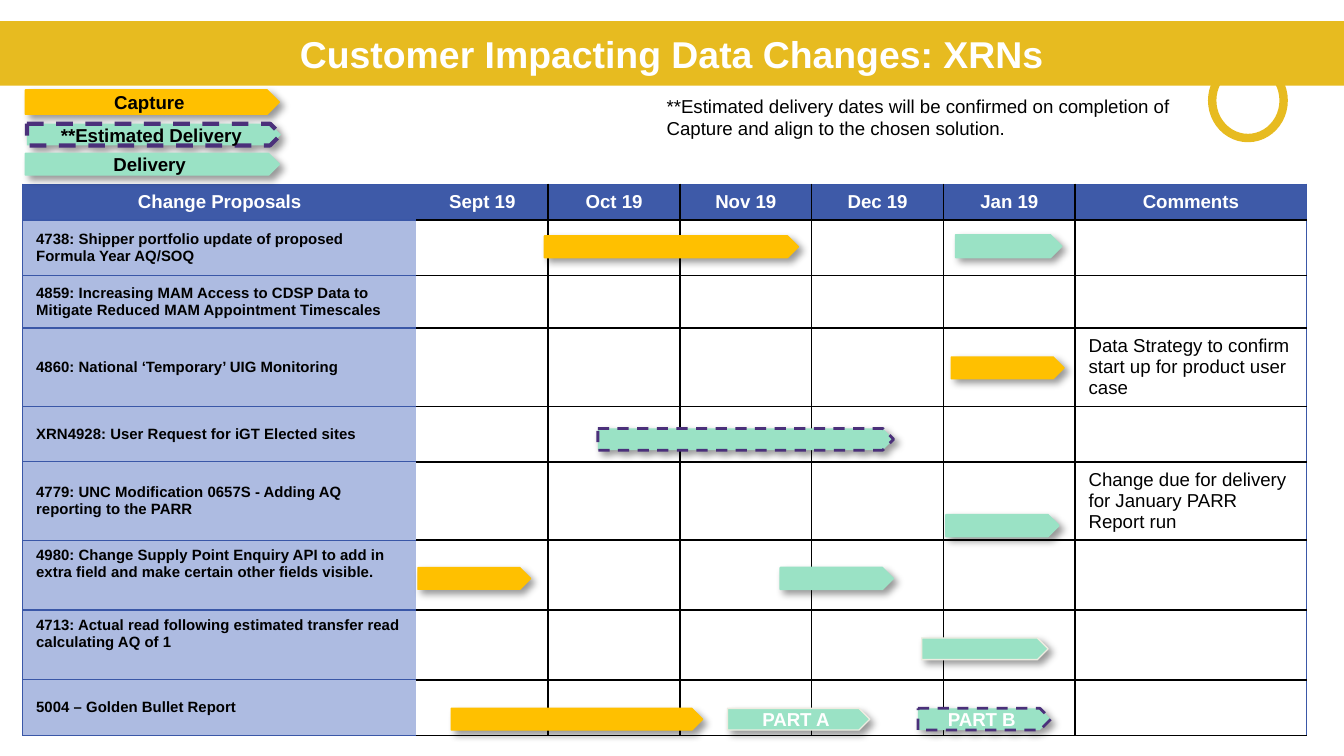
import pptx
import pptx.dml.color
import pptx.enum.dml
import pptx.enum.shapes
import pptx.enum.text
import pptx.oxml.ns
import pptx.util
from lxml import etree

Cm = pptx.util.Cm
Pt = pptx.util.Pt
RGBColor = pptx.dml.color.RGBColor
MSO_SHAPE = pptx.enum.shapes.MSO_SHAPE
ANCHOR = pptx.enum.text.MSO_ANCHOR
ALIGN = pptx.enum.text.PP_ALIGN
qn = pptx.oxml.ns.qn

GOLD = RGBColor(0xE7, 0xBB, 0x20)
AMBER = RGBColor(0xFF, 0xC0, 0x00)
MINT = RGBColor(0x9A, 0xE2, 0xC5)
PURPLE = RGBColor(0x4B, 0x30, 0x7A)
CREAM = RGBColor(0xEE, 0xEC, 0xE1)
HEADER_BLUE = RGBColor(0x3E, 0x5A, 0xA8)
BORDER_BLUE = RGBColor(0x3A, 0x57, 0xA7)
PALE_BLUE = RGBColor(0xAD, 0xBB, 0xE1)
BLACK = RGBColor(0, 0, 0)
WHITE = RGBColor(0xFF, 0xFF, 0xFF)


def write(tf, text, size, color, bold=False, align=ALIGN.LEFT):
    p = tf.paragraphs[0]
    p.text = text
    p.alignment = align
    p.font.name = "Arial"
    p.font.size = Pt(size)
    p.font.bold = bold
    p.font.color.rgb = color


def set_border(cell, side, color, width):
    ln = etree.SubElement(cell._tc.get_or_add_tcPr(), qn("a:ln" + side), w=str(Pt(width)))
    if color is None:
        etree.SubElement(ln, qn("a:noFill"))
    else:
        fill = etree.SubElement(ln, qn("a:solidFill"))
        etree.SubElement(fill, qn("a:srgbClr"), val=str(color))


prs = pptx.Presentation()
prs.slide_width = Cm(25.4)
prs.slide_height = Cm(14.29)
s = prs.slides.add_slide(prs.slide_layouts[6])

# Title banner
sp = s.shapes.add_shape(MSO_SHAPE.RECTANGLE, 0, Cm(0.4), Cm(25.4), Cm(1.22))
sp.shadow.inherit = False
sp.fill.solid()
sp.fill.fore_color.rgb = GOLD
sp.line.fill.background()
sp.text_frame.vertical_anchor = ANCHOR.MIDDLE
write(sp.text_frame, "Customer Impacting Data Changes: XRNs", 20, WHITE, True, ALIGN.CENTER)

# Ring under the banner
sp = s.shapes.add_shape(MSO_SHAPE.OVAL, Cm(22.91), Cm(1.19), Cm(1.35), Cm(1.42))
sp.shadow.inherit = False
sp.fill.background()
sp.line.color.rgb = GOLD
sp.line.width = Pt(4.5)

# Note on the estimated dates
tf = s.shapes.add_textbox(Cm(12.35), Cm(1.66), Cm(10.13), Cm(1.12)).text_frame
tf.word_wrap = True
write(tf, "**Estimated delivery dates will be confirmed on completion of Capture "
      "and align to the chosen solution.", 10, BLACK)

# Timeline table: proposal, comment, row height
headers = ["Change Proposals", "Sept 19", "Oct 19", "Nov 19", "Dec 19", "Jan 19", "Comments"]
proposals = [
    ("4738: Shipper portfolio update of proposed Formula Year AQ/SOQ", "", 1.05),
    ("4859: Increasing MAM Access to CDSP Data to Mitigate Reduced MAM Appointment Timescales",
     "", 0.99),
    ("4860: National ‘Temporary’ UIG Monitoring",
     "Data Strategy to confirm start up for product user case", 1.48),
    ("XRN4928: User Request for iGT Elected sites", "", 1.05),
    ("4779: UNC Modification 0657S - Adding AQ reporting to the PARR",
     "Change due for delivery for January PARR Report run", 1.48),
    ("4980: Change Supply Point Enquiry API to add in extra field and make certain "
     "other fields visible.", "", 1.32),
    ("4713: Actual read following estimated transfer read calculating AQ of 1", "", 1.32),
    ("5004 – Golden Bullet Report", "", 1.05),
]
rows = [headers] + [[name] + [""] * 5 + [comment] for name, comment, _ in proposals]
heights = [0.68] + [height for _, _, height in proposals]
widths = [7.44] + [2.49] * 5 + [4.37]
last = len(widths) - 1

table = s.shapes.add_table(len(rows), len(widths), Cm(0.43), Cm(3.48),
                           Cm(sum(widths)), Cm(sum(heights))).table
table.first_row = False
table.horz_banding = False
for c, width in enumerate(widths):
    table.columns[c].width = Cm(width)
for r, height in enumerate(heights):
    table.rows[r].height = Cm(height)
    for c, text in enumerate(rows[r]):
        cell = table.cell(r, c)
        top_text = c == 0 and text.startswith(("4980", "4713"))
        cell.vertical_anchor = ANCHOR.TOP if top_text else ANCHOR.MIDDLE
        if c == last:
            cell.margin_top = cell.margin_bottom = Cm(0.08)

        # Blue outside and in the first column, black grid elsewhere
        blue, black, none = (BORDER_BLUE, 0.75), (BLACK, 1), (None, 0)
        set_border(cell, "L", *(blue if c == 0 else none if c == 1 else black))
        set_border(cell, "R", *(none if c == 0 else blue if c == last else black))
        set_border(cell, "T", *(blue if c == 0 or r == 0 else black))
        set_border(cell, "B", *(blue if c == 0 else black))

        if r == 0:
            cell.fill.solid()
            cell.fill.fore_color.rgb = HEADER_BLUE
            write(cell.text_frame, text, 10, WHITE, True, ALIGN.CENTER)
        elif c == 0:
            cell.fill.solid()
            cell.fill.fore_color.rgb = PALE_BLUE
            write(cell.text_frame, text, 8, BLACK, True)
        else:
            cell.fill.background()
            write(cell.text_frame, text, 10, BLACK)

# Legend and timeline bars: left, top, width, height, fill, line, line width, text, text colour
bars = [
    (0.48, 1.7, 4.8, 0.46, AMBER, AMBER, 0.75, "Capture", BLACK),
    (0.51, 2.34, 4.8, 0.41, MINT, PURPLE, 2.25, "**Estimated Delivery", BLACK),
    (0.48, 2.9, 4.8, 0.41, MINT, MINT, 0.75, "Delivery", BLACK),
    (10.29, 4.46, 4.8, 0.41, AMBER, AMBER, 0.75, "", WHITE),
    (18.06, 4.44, 2.01, 0.43, MINT, MINT, 0.75, "", WHITE),
    (17.98, 6.75, 2.13, 0.41, AMBER, AMBER, 0.75, "", WHITE),
    (11.3, 8.1, 5.59, 0.41, MINT, PURPLE, 1.5, "", WHITE),
    (17.88, 9.73, 2.13, 0.41, MINT, MINT, 1, "", WHITE),
    (7.9, 10.73, 2.13, 0.41, AMBER, AMBER, 0.75, "", WHITE),
    (14.75, 10.73, 2.13, 0.41, MINT, MINT, 1, "", WHITE),
    (17.42, 12.06, 2.39, 0.41, MINT, CREAM, 0.75, "", WHITE),
    (8.53, 13.39, 4.75, 0.41, AMBER, AMBER, 0.75, "", WHITE),
    (13.75, 13.39, 2.69, 0.41, MINT, CREAM, 0.75, "PART A", WHITE),
    (17.35, 13.39, 2.51, 0.41, MINT, PURPLE, 1.5, "PART B", WHITE),
]
for x, y, w, h, fill, line, line_width, text, color in bars:
    sp = s.shapes.add_shape(MSO_SHAPE.PENTAGON, Cm(x), Cm(y), Cm(w), Cm(h))
    sp.fill.solid()
    sp.fill.fore_color.rgb = fill
    sp.line.color.rgb = line
    sp.line.width = Pt(line_width)
    if line == PURPLE:
        sp.line.dash_style = pptx.enum.dml.MSO_LINE.DASH

    # Soft shadow to the lower right
    sp.shadow.inherit = False
    effects = sp._element.spPr.find(qn("a:effectLst"))
    shadow = etree.SubElement(effects, qn("a:outerShdw"), blurRad=str(Pt(4)), dist=str(Pt(3)),
                              dir="2700000", algn="tl", rotWithShape="0")
    shade = etree.SubElement(shadow, qn("a:srgbClr"), val=str(BLACK))
    etree.SubElement(shade, qn("a:alpha"), val="40000")

    if text:
        tf = sp.text_frame
        tf.margin_left = tf.margin_right = tf.margin_top = tf.margin_bottom = 0
        tf.word_wrap = False
        tf.vertical_anchor = ANCHOR.MIDDLE
        write(tf, text, 10, color, True, ALIGN.CENTER)

prs.save("out.pptx")
